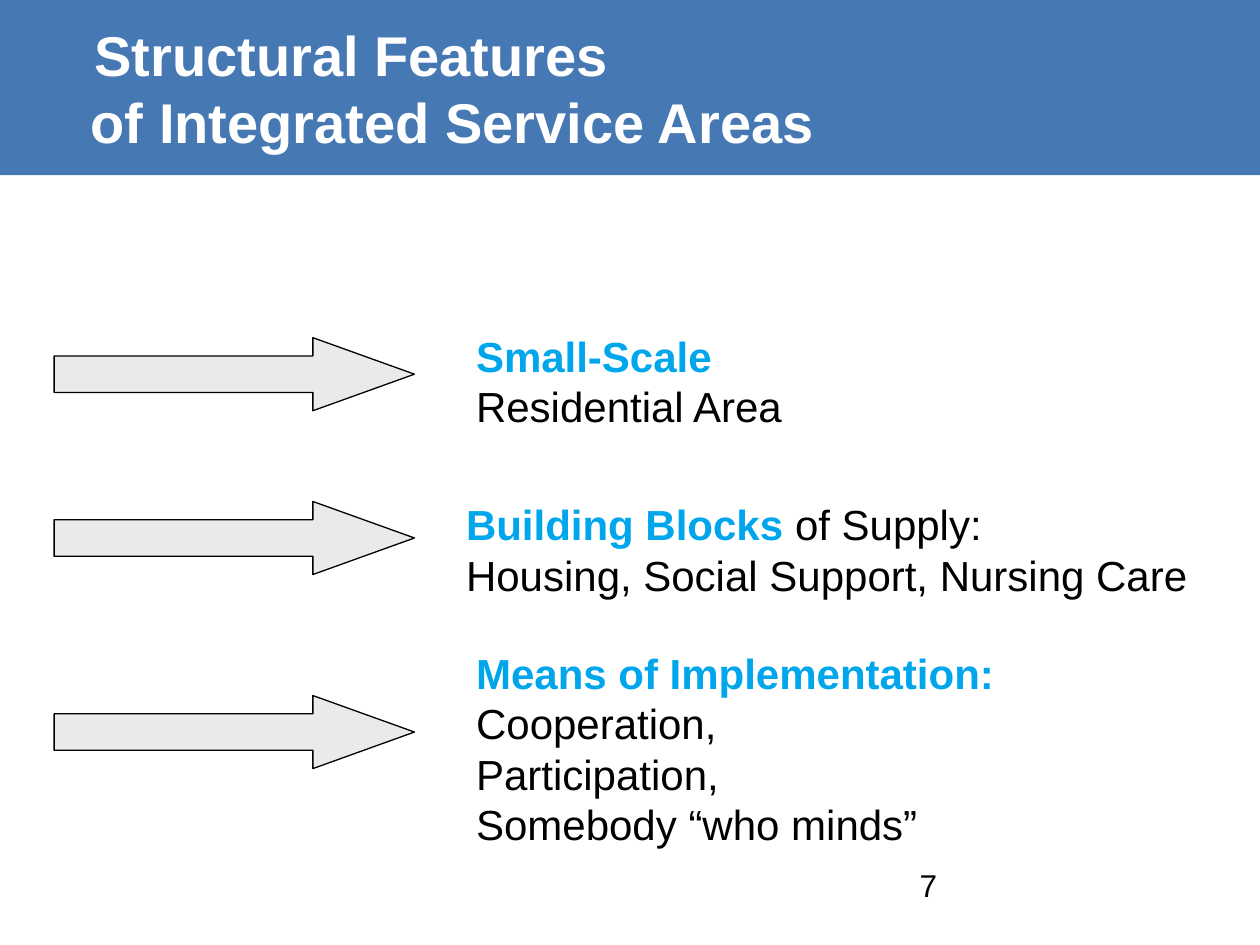
from pptx import Presentation
from pptx.dml.color import RGBColor
from pptx.enum.shapes import MSO_SHAPE
from pptx.enum.text import MSO_ANCHOR, PP_ALIGN
from pptx.util import Inches, Pt

ARROW = MSO_SHAPE.RIGHT_ARROW
MIDDLE = MSO_ANCHOR.MIDDLE
LEFT = PP_ALIGN.LEFT
BLUE = RGBColor(0x46, 0x78, 0xB4)
CYAN = RGBColor(0x00, 0xA6, 0xEB)
GREY = RGBColor(0xEA, 0xEA, 0xEA)
BLACK = RGBColor(0, 0, 0)
WHITE = RGBColor(255, 255, 255)

# Each row: arrow top, text box (left, top, width, height), key words, lines
ROWS = [
    (2.68, (3.68, 2.57, 2.67, 0.91), "Small-Scale", ["", "Residential Area"]),
    (3.98, (3.6, 3.91, 6.12, 0.91), "Building Blocks",
     [" of Supply:", "Housing, Social Support, Nursing Care"]),
    (5.52, (3.68, 5.09, 4.58, 1.72), "Means of Implementation:",
     ["", "Cooperation,", "Participation,", "Somebody “who minds”"]),
]


def set_font(font, size, color, bold=False):
    """Apply the slide's typeface with a size, colour and weight."""
    font.name = "Arial"
    font.size = Pt(size)
    font.color.rgb = color
    font.bold = bold


def add_lines(para, lines):
    """Append lines to a paragraph with breaks between them."""
    for i, line in enumerate(lines):
        if i:
            para.add_line_break()
        if line:
            para.add_run().text = line


def set_title(slide, lines):
    """Turn the title placeholder into the blue band."""
    title = slide.shapes.title
    title.left, title.top = Inches(0), Inches(0)
    title.width, title.height = Inches(10), Inches(1.39)
    title.fill.solid()
    title.fill.fore_color.rgb = BLUE
    frame = title.text_frame
    frame.vertical_anchor = MIDDLE
    para = frame.paragraphs[0]
    para.alignment = LEFT
    props = para._p.get_or_add_pPr()
    props.set("marL", str(Inches(0.62)))
    props.set("indent", str(Inches(0.03)))
    add_lines(para, lines)
    set_font(para.font, 32, WHITE, True)


def add_arrow(slide, top):
    """Draw one grey block arrow at the left."""
    arrow = slide.shapes.add_shape(
        ARROW, Inches(0.43), Inches(top), Inches(2.86), Inches(0.58))
    arrow.adjustments[1] = 1.39
    arrow.shadow.inherit = False
    arrow.fill.solid()
    arrow.fill.fore_color.rgb = GREY
    arrow.line.color.rgb = BLACK
    arrow.line.width = Pt(0.75)


def add_text(slide, box, lines, size, key=None):
    """Add a text box whose key words, if any, stand out."""
    shape = slide.shapes.add_textbox(*map(Inches, box))
    frame = shape.text_frame
    frame.word_wrap = True
    para = frame.paragraphs[0]
    if key:
        run = para.add_run()
        run.text = key
        run.font.bold = True
        run.font.color.rgb = CYAN
    add_lines(para, lines)
    set_font(para.font, size, BLACK)


def main():
    """Build the slide and save it."""
    prs = Presentation()
    prs.slide_width, prs.slide_height = Inches(10), Inches(7.5)
    slide = prs.slides.add_slide(prs.slide_layouts[5])
    set_title(slide, ["Structural Features", "of Integrated Service Areas"])
    for top, box, key, lines in ROWS:
        add_arrow(slide, top)
        add_text(slide, box, lines, 24, key)
    add_text(slide, (7.2, 6.82, 2.33, 0.52), ["7"], 18)
    prs.save("out.pptx")


if __name__ == "__main__":
    main()
